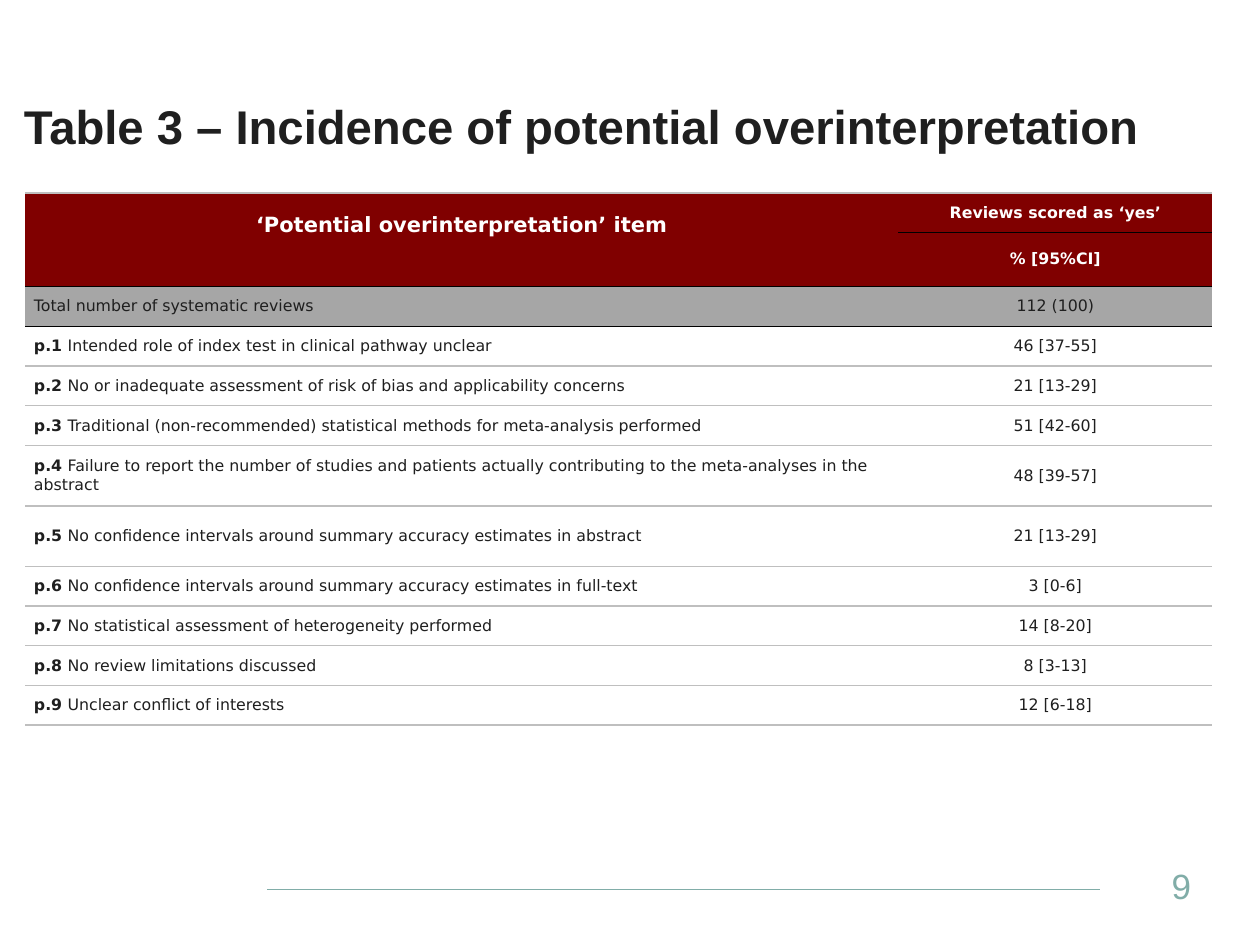
from lxml import etree
from pptx import Presentation
from pptx import util as u
from pptx.dml.color import RGBColor
from pptx.enum import shapes, text
from pptx.oxml import ns

INK, TEAL, RED, WHITE = "1F1F1F", "81ADA8", "800000", "FFFFFF"
GREY, BLACK, BAND = "BFBFBF", "000000", "A6A6A6"


def tint(part, hue):
    if hasattr(part, "solid"):
        part.solid()
        part = part.fore_color
    part.rgb = RGBColor.from_string(hue)


def put(para, words, size=9, hue=INK, bold=False, face="DejaVu Sans", align=None):
    run = para.add_run()
    run.text = words
    run.font.size = u.Pt(size)
    run.font.bold = bold
    run.font.name = face
    tint(run.font.color, hue)
    if align is not None:
        para.alignment = align


MID = text.PP_ALIGN.CENTER
LEFT = text.PP_ALIGN.LEFT

deck = Presentation()
deck.slide_width, deck.slide_height = u.Inches(10), u.Inches(7.5)
slide = deck.slides.add_slide(deck.slide_layouts[5])

rule = slide.shapes.add_connector(
    shapes.MSO_CONNECTOR.STRAIGHT, u.Inches(2.12), u.Inches(7.06), u.Inches(8.73), u.Inches(7.06))
tint(rule.line.fill, TEAL)
rule.line.width = u.Pt(0.5)
etree.SubElement(rule._element.spPr, ns.qn("a:effectLst"))

title = slide.shapes.title
title.left, title.top = u.Inches(0.09), u.Inches(0.72)
title.width, title.height = u.Inches(9.39), u.Inches(0.82)
frame = title.text_frame
frame.auto_size = text.MSO_AUTO_SIZE.NONE
frame.vertical_anchor = text.MSO_ANCHOR.TOP
put(frame.paragraphs[0], "Table 3 – Incidence of potential overinterpretation",
    size=27, bold=True, face="Arial", align=LEFT)

page = slide.shapes.add_textbox(u.Inches(9.2), u.Inches(6.83), u.Inches(0.8), u.Inches(0.4))
page.text_frame.word_wrap = True
page.text_frame.vertical_anchor = text.MSO_ANCHOR.MIDDLE
put(page.text_frame.paragraphs[0], "9", size=20, hue=TEAL, face="Arial")

items = [
    ("Intended role of index test in clinical pathway unclear", "46 [37-55]"),
    ("No or inadequate assessment of risk of bias and applicability concerns", "21 [13-29]"),
    ("Traditional (non-recommended) statistical methods for meta-analysis performed", "51 [42-60]"),
    ("Failure to report the number of studies and patients actually contributing to the "
     "meta-analyses in the abstract", "48 [39-57]"),
    ("No confidence intervals around summary accuracy estimates in abstract", "21 [13-29]"),
    ("No confidence intervals around summary accuracy estimates in full-text", "3 [0-6]"),
    ("No statistical assessment of heterogeneity performed", "14 [8-20]"),
    ("No review limitations discussed", "8 [3-13]"),
    ("Unclear conflict of interests", "12 [6-18]"),
]
head = 3
count = head + len(items)
tall = (6, 7)

shape = slide.shapes.add_table(
    count, 2, u.Inches(0.2), u.Inches(1.53), u.Inches(9.42), u.Inches(4.11))
grid = shape.table
grid.horz_banding = False
style = grid._tbl.tblPr.find(ns.qn("a:tableStyleId"))
style.text = "{2D5ABB26-0587-4C30-8999-92F81FD0307C}"
grid.columns[0].width, grid.columns[1].width = u.Inches(6.93), u.Inches(2.49)

for row in range(count):
    grid.rows[row].height = u.Inches(0.48 if row in tall else 0.315)
    for col in range(2):
        cell = grid.cell(row, col)
        cell.vertical_anchor = text.MSO_ANCHOR.MIDDLE
        cell.margin_left = cell.margin_right = u.Inches(0.07)
        cell.margin_top = cell.margin_bottom = 0
        for side, edge in (("a:lnT", row), ("a:lnB", row + 1)):
            if col == 0 and edge == 1:
                continue
            line = etree.SubElement(cell._tc.get_or_add_tcPr(), ns.qn(side), w=str(u.Pt(1)))
            fill = etree.SubElement(line, ns.qn("a:solidFill"))
            shade = BLACK if 1 <= edge <= head else GREY
            etree.SubElement(fill, ns.qn("a:srgbClr"), val=shade)
        if row < head:
            tint(cell.fill, RED if row < 2 else BAND)
        else:
            cell.fill.background()

grid.cell(0, 0).merge(grid.cell(1, 0))
grid.cell(0, 0).margin_bottom = u.Inches(0.23)

labels = [
    (0, 0, "‘Potential overinterpretation’ item", dict(size=12, hue=WHITE, bold=True, align=MID)),
    (0, 1, "Reviews scored as ‘yes’", dict(hue=WHITE, bold=True, align=MID)),
    (1, 1, "% [95%CI]", dict(hue=WHITE, bold=True, align=MID)),
    (2, 0, "Total number of systematic reviews", {}),
    (2, 1, "112 (100)", dict(align=MID)),
]
for row, col, words, form in labels:
    put(grid.cell(row, col).text_frame.paragraphs[0], words, **form)

for num, (item, score) in enumerate(items, 1):
    row = head + num - 1
    para = grid.cell(row, 0).text_frame.paragraphs[0]
    put(para, f"p.{num} ", bold=True)
    put(para, item)
    put(grid.cell(row, 1).text_frame.paragraphs[0], score, align=MID)

deck.save("out.pptx")
